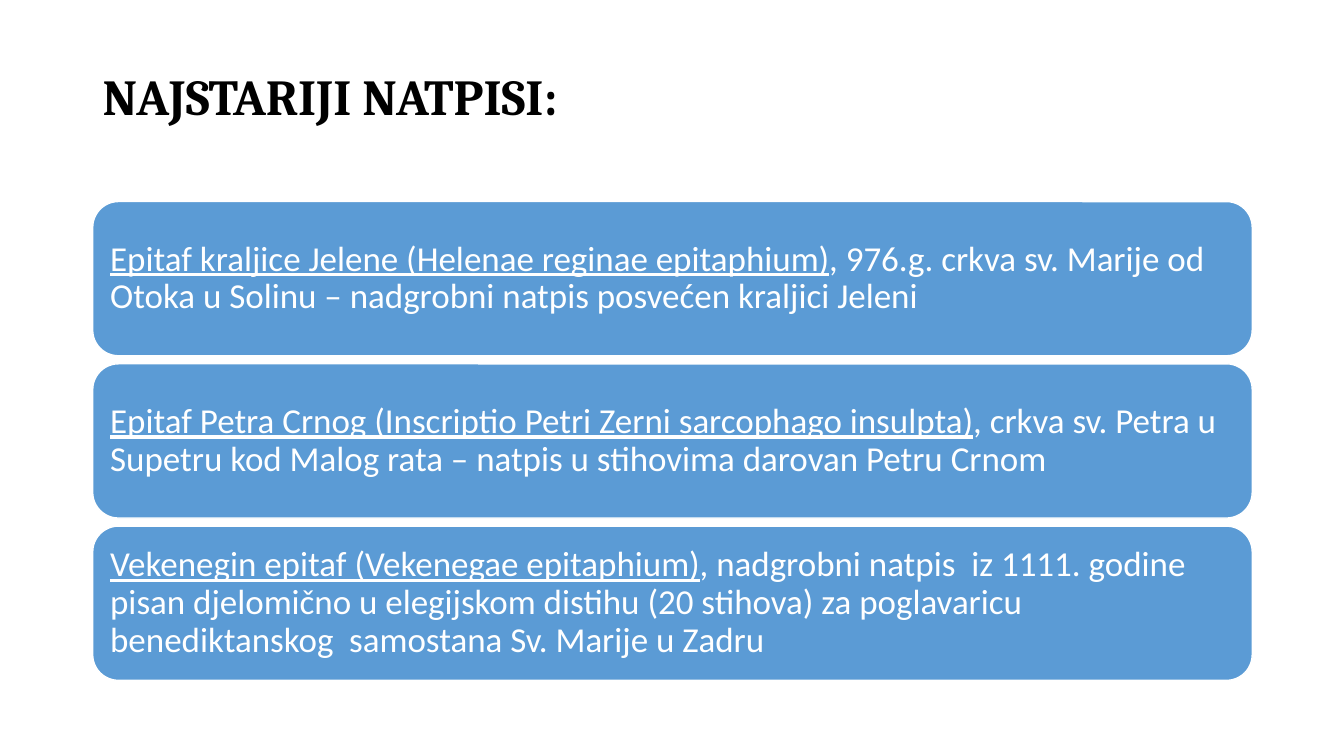
from pptx import Presentation
from pptx.dml.color import RGBColor
from pptx.enum.shapes import MSO_SHAPE
from pptx.enum.text import MSO_ANCHOR, PP_ALIGN
from pptx.util import Inches, Pt

# Grid: one column of equally spaced cards
LEFT, WIDTH = 0.92, 11.5
CARDS_TOP, CARD_HEIGHT, CARD_STEP = 2, 1.53, 1.61

TITLE_FORMAT = {"name": "Cambria", "size": Pt(36), "bold": True}
CARD_FORMAT = {"name": "Calibri", "size": Pt(25)}

INSCRIPTIONS = [
    ("Epitaf kraljice Jelene (Helenae reginae epitaphium)",
     ", 976.g. crkva sv. Marije od Otoka u Solinu – nadgrobni natpis posvećen kraljici Jeleni"),
    ("Epitaf Petra Crnog (Inscriptio Petri Zerni sarcophago insulpta)",
     ", crkva sv. Petra u Supetru kod Malog rata – natpis u stihovima darovan Petru Crnom"),
    ("Vekenegin epitaf (Vekenegae epitaphium)",
     ", nadgrobni natpis  iz 1111. godine pisan djelomično u elegijskom distihu (20 stihova)"
     " za poglavaricu  benediktanskog  samostana Sv. Marije u Zadru"),
]


def color(hex_value):
    return RGBColor.from_string(hex_value)


def set_frame(shape, anchor, inset):
    """Prepare the text frame and return its first paragraph."""
    frame = shape.text_frame
    settings = {"word_wrap": True, "vertical_anchor": anchor}
    for side in ("left", "top", "right", "bottom"):
        settings[f"margin_{side}"] = Inches(inset)
    for name, value in settings.items():
        setattr(frame, name, value)
    paragraph = frame.paragraphs[0]
    paragraph.alignment = PP_ALIGN.LEFT
    paragraph.line_spacing = 0.9
    return paragraph


def add_run(paragraph, text, hex_value, formats):
    run = paragraph.add_run()
    run.text = text
    run.font.color.rgb = color(hex_value)
    for name, value in formats.items():
        setattr(run.font, name, value)


def add_title(slide, text):
    box = slide.shapes.add_textbox(
        Inches(LEFT), Inches(0.61), Inches(WIDTH), Inches(1.24))
    paragraph = set_frame(box, MSO_ANCHOR.TOP, 0.1)
    add_run(paragraph, text, "000000", TITLE_FORMAT)


def add_card(slide, row, heading, details):
    card = slide.shapes.add_shape(
        MSO_SHAPE.ROUNDED_RECTANGLE, Inches(LEFT),
        Inches(CARDS_TOP + row * CARD_STEP), Inches(WIDTH), Inches(CARD_HEIGHT))
    card.shadow.inherit = False
    card.fill.solid()
    card.fill.fore_color.rgb = color("5B9BD5")
    card.line.color.rgb = color("FFFFFF")
    card.line.width = Pt(1)
    paragraph = set_frame(card, MSO_ANCHOR.MIDDLE, 0.1)
    add_run(paragraph, heading, "FFFFFF", {**CARD_FORMAT, "underline": True})
    add_run(paragraph, details, "FFFFFF", CARD_FORMAT)


def main():
    presentation = Presentation()
    presentation.slide_width = Inches(13.33)
    presentation.slide_height = Inches(7.5)
    slide = presentation.slides.add_slide(presentation.slide_layouts[6])

    # Heading
    add_title(slide, "NAJSTARIJI NATPISI:")

    # One card for each inscription
    for row, (heading, details) in enumerate(INSCRIPTIONS):
        add_card(slide, row, heading, details)

    presentation.save("out.pptx")


if __name__ == "__main__":
    main()
